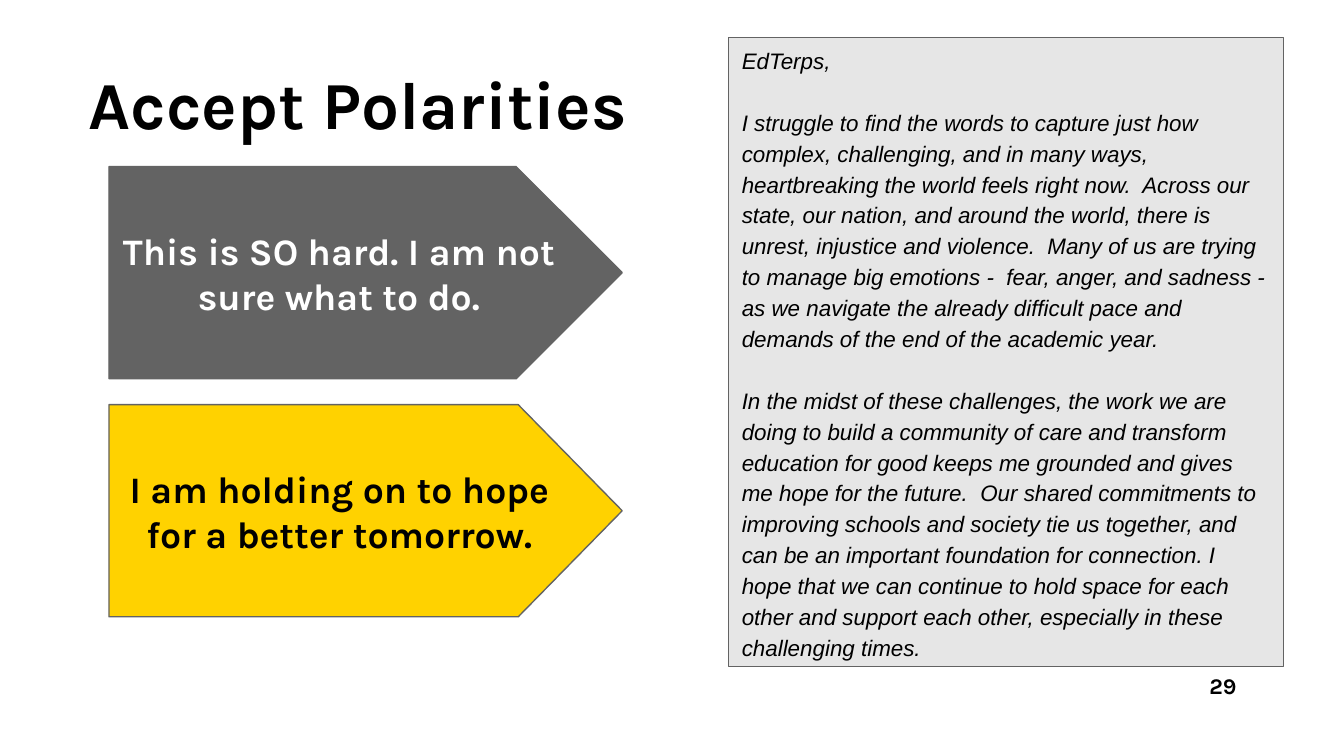
from pptx import Presentation
from pptx.dml.color import RGBColor as RGB
from pptx.enum.shapes import MSO_SHAPE as Kind
from pptx.enum.text import MSO_ANCHOR as Anchor, PP_ALIGN as Align
from pptx.util import Cm, Pt

GREY, BLACK, WHITE = "636363", "000000", "FFFFFF"


def style(par, size, color=BLACK, face="Karla", bold=True, align=Align.LEFT):
    par.alignment = align
    font = par.font
    font.name, font.size, font.bold = face, Pt(size), bold
    font.color.rgb = RGB.from_string(color)


def block(kind, left, top, width, height, fill):
    shape = slide.shapes.add_shape(kind, Cm(left), Cm(top), Cm(width), Cm(height))
    shape.shadow.inherit = False
    shape.fill.solid()
    shape.fill.fore_color.rgb = RGB.from_string(fill)
    shape.line.color.rgb = RGB.from_string(GREY)
    shape.line.width = Pt(0.75)
    frame = shape.text_frame
    frame.word_wrap = True
    frame.vertical_anchor = Anchor.MIDDLE
    frame.margin_left = frame.margin_right = Cm(0.25)
    frame.margin_top = frame.margin_bottom = Cm(0.25)
    return shape


deck = Presentation()
deck.slide_width, deck.slide_height = Cm(25.4), Cm(14.29)
slide = deck.slides.add_slide(deck.slide_layouts[5])

# Title
title = slide.shapes.title
title.left, title.top, title.width, title.height = Cm(1.68), Cm(1.07), Cm(23.29), Cm(1.73)
frame = title.text_frame
frame.margin_left = frame.margin_right = frame.margin_top = frame.margin_bottom = 0
frame.vertical_anchor = Anchor.MIDDLE
frame.text = "Accept Polarities"
style(frame.paragraphs[0], 36)

# Page number
page = slide.shapes.add_textbox(Cm(22.1), Cm(12.45), Cm(1.52), Cm(1.09))
frame = page.text_frame
frame.word_wrap = True
frame.margin_left = frame.margin_right = frame.margin_top = frame.margin_bottom = Cm(0.25)
frame.text = "29"
style(frame.paragraphs[0], 12, align=Align.RIGHT)

# Letter
letter = [
    "EdTerps,",
    "I struggle to find the words to capture just how complex, challenging, and in many ways, "
    "heartbreaking the world feels right now.  Across our state, our nation, and around the world, "
    "there is unrest, injustice and violence.  Many of us are trying to manage big emotions -  fear, "
    "anger, and sadness - as we navigate the already difficult pace and demands of the end of the "
    "academic year.",
    "In the midst of these challenges, the work we are doing to build a community of care and "
    "transform education for good keeps me grounded and gives me hope for the future.  Our shared "
    "commitments to improving schools and society tie us together, and can be an important "
    "foundation for connection. I hope that we can continue to hold space for each other and "
    "support each other, especially in these challenging times.",
]
frame = block(Kind.RECTANGLE, 13.77, 0.71, 10.49, 11.89, "E6E6E6").text_frame
for i, text in enumerate(letter):
    par = frame.add_paragraph() if i else frame.paragraphs[0]
    par.text = text
    par.line_spacing = 1.15
    if i:
        par.space_before = Pt(16.5)
    style(par, 12, face="Arial", bold=False)
    par.font.italic = True

# Two opposing thoughts
thoughts = [
    ("This is SO hard. I am not sure what to do.", GREY, WHITE, 0.5),
    ("I am holding on to hope for a better tomorrow.", "FFD200", BLACK, 0.49),
]
for i, (text, fill, color, point) in enumerate(thoughts):
    arrow = block(Kind.PENTAGON, 2.06, 3.15 + 4.5 * i, 9.7, 4.01, fill)
    arrow.adjustments[0] = point
    arrow.text_frame.text = text
    style(arrow.text_frame.paragraphs[0], 20, color, align=Align.CENTER)

deck.save("out.pptx")
